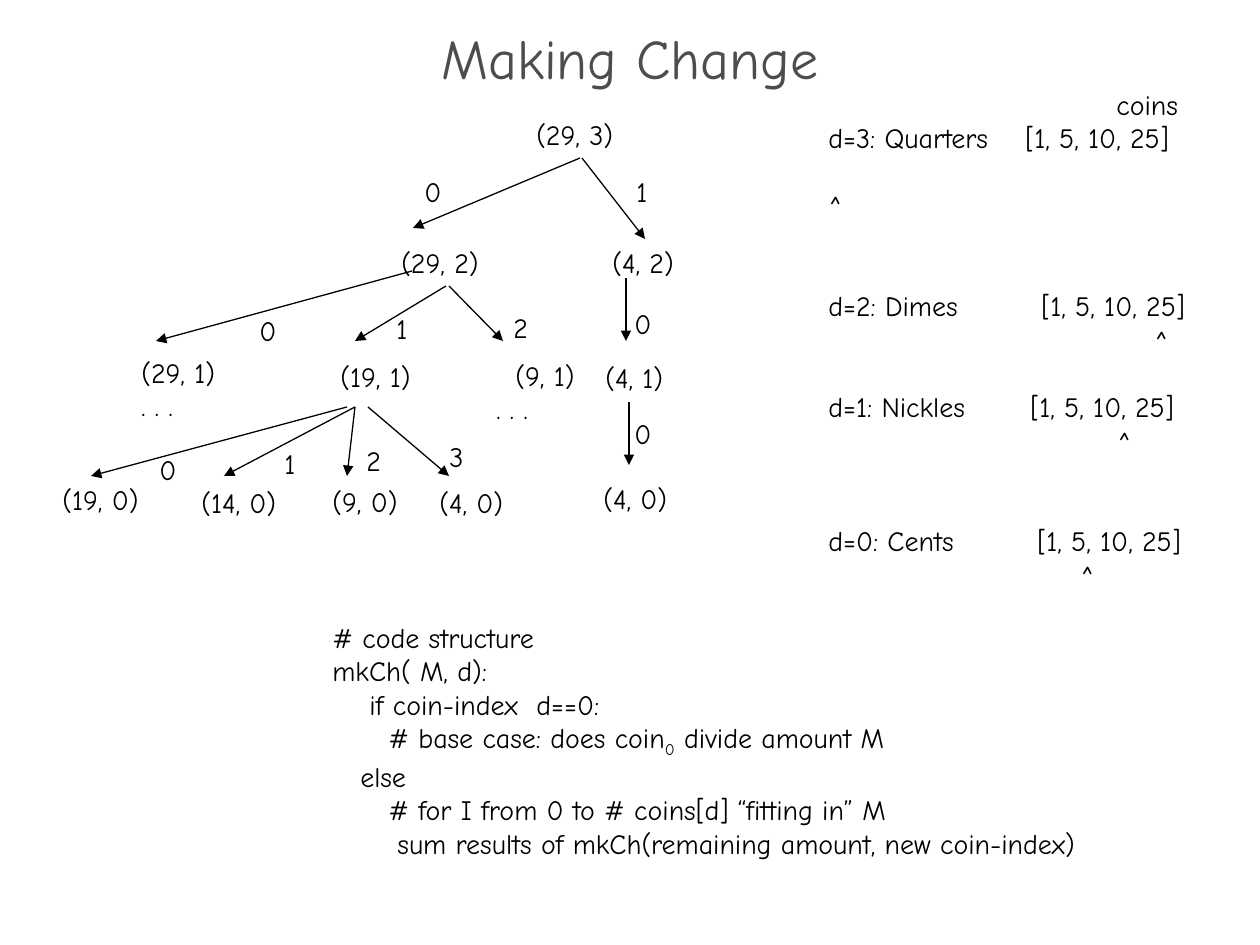
from dataclasses import dataclass
from lxml.etree import SubElement as Sub
from pptx import Presentation
from pptx.dml.color import RGBColor as Rgb
from pptx.enum.shapes import MSO_CONNECTOR as Link
from pptx.enum.text import MSO_ANCHOR as Anchor, MSO_AUTO_SIZE as Fit, PP_ALIGN as Align
from pptx.oxml.ns import qn
from pptx.util import Emu, Pt


@dataclass(frozen=True)
class Theme:
    face: str = "Comic Neue"
    ink: Rgb = Rgb(0, 0, 0)
    head: Rgb = Rgb(0x4D, 0x4D, 0x4D)
    title: int = 32
    body: int = 16
    row: float = 19.2  # height of one body line, in points
    line: float = 0.75


THEME = Theme()

# text, left, top, width, indent of the first line
NODES = [
    ("(29, 3)", 474, 0, 113, 0),
    ("(29, 2)", 339, 128, 113, 0),
    ("(4, 2)", 550, 128, 97, 0),
    ("(29, 1)\n. . .", 79, 238, 110, 0),
    ("(19, 1)", 278, 242, 105, 0),
    ("(9, 1)\n. . .", 434, 241, 110, 19),
    ("(4, 1)", 543, 243, 92, 0),
    ("(19, 0)", 0, 365, 110, 0),
    ("(14, 0)", 139, 368, 110, 0),
    ("(9, 0)", 270, 367, 97, 0),
    ("(4, 0)", 377, 368, 97, 0),
    ("(4, 0)", 541, 364, 97, 0),
]
# start, end, coin count, place of the count
EDGES = [
    ((530, 47), (363, 117), "0", (362, 57)),
    ((532, 47), (595, 128), "1", (574, 57)),
    ((362, 160), (106, 230), "0", (197, 196)),
    ((396, 175), (305, 230), "1", (334, 194)),
    ((399, 175), (453, 230), "2", (451, 193)),
    ((576, 167), (576, 230), "0", (572, 189)),
    ((297, 296), (41, 365), "0", (97, 335)),
    ((305, 296), (174, 365), "1", (222, 329)),
    ((305, 296), (297, 365), "2", (304, 326)),
    ((318, 296), (399, 365), "3", (387, 322)),
    ((579, 291), (579, 354), "0", (572, 299)),
]
# name, list offset, caret offset, lines skipped before the name and the caret
COINS = [
    ("d=3: Quarters", 197, 0, 0, 1),
    ("d=2: Dimes", 213, 326, 2, 0),
    ("d=1: Nickles", 202, 289, 1, 0),
    ("d=0: Cents", 209, 252, 2, 0),
]
# indent, pieces of text; every second piece is a subscript
CODE = [
    (0, ["# code structure"]),
    (0, ["mkCh( M, d):"]),
    (37, ["if coin-index  d==0:"]),
    (56, ["# base case: does coin", "0", " divide amount M"]),
    (28, ["else"]),
    (56, ["# for I from 0 to # coins[d] “fitting in” M"]),
    (65, ["sum results of mkCh(remaining amount, new coin-index)"]),
]


def px(n):
    return Emu(n * 914400 // 126)


def style(para, size=THEME.body, color=THEME.ink):
    font = para.font
    font.name, font.size, font.color.rgb = THEME.face, Pt(size), color


def frame(slide, box, wrap=True):
    text = slide.shapes.add_textbox(*map(px, box)).text_frame
    text.word_wrap = wrap
    return text


def add_line(text, first, words, indent=0, skip=0):
    """Add a paragraph, indented in px and set down by skipped lines."""
    para = text.paragraphs[0] if first else text.add_paragraph()
    para.text = words
    style(para)
    if skip:
        para.space_before = Pt(skip * THEME.row)
    if indent:
        para._p.get_or_add_pPr().set("marL", str(px(indent)))
    return para


def add_tab(para, left):
    tabs = para._p.get_or_add_pPr()
    stops = tabs.makeelement(qn("a:tabLst"), {})
    Sub(stops, qn("a:tab"), pos=str(px(left)), algn="l")
    tabs.find(qn("a:defRPr")).addprevious(stops)


def add_title(slide, box, words):
    shape = slide.shapes.title
    shape.left, shape.top, shape.width, shape.height = map(px, box)
    text = shape.text_frame
    text.auto_size, text.vertical_anchor = Fit.NONE, Anchor.MIDDLE
    text.text = words
    para = text.paragraphs[0]
    para.alignment, para.line_spacing = Align.CENTER, 0.7
    style(para, THEME.title, THEME.head)


def add_arrow(slide, start, end):
    arrow = slide.shapes.add_connector(Link.STRAIGHT, *map(px, start + end))
    arrow.line.color.rgb, arrow.line.width = THEME.ink, Pt(THEME.line)
    Sub(arrow.line._get_or_add_ln(), qn("a:tailEnd"), type="triangle")
    Sub(arrow._element.spPr, qn("a:effectLst"))


def add_tree(slide, left, top):
    def place(x, y):
        return left + x, top + y

    for start, end, count, spot in EDGES:
        add_arrow(slide, place(*start), place(*end))
        add_line(frame(slide, (*place(*spot), 43, 47), False), True, count)
    for words, x, y, wide, indent in NODES:
        rows = words.split("\n")
        text = frame(slide, (*place(x, y), wide, 13 + 34 * len(rows)), False)
        for i, row in enumerate(rows):
            add_line(text, i == 0, row, 0 if i else indent)


def add_coins(slide, box):
    text = frame(slide, box)
    add_line(text, True, "coins", 288)
    for name, tab, caret, gap, drop in COINS:
        para = add_line(text, False, name + "\t[1, 5, 10, 25]", skip=gap)
        add_tab(para, tab)
        add_line(text, False, "^", caret, drop)


def add_code(slide, box):
    text = frame(slide, box)
    for i, (indent, parts) in enumerate(CODE):
        para = add_line(text, i == 0, "", indent)
        for j, part in enumerate(parts):
            run = para.add_run()
            run.text = part
            if j % 2:
                run.font._element.set("baseline", "-25000")


def main():
    deck = Presentation()
    deck.slide_width, deck.slide_height = px(1260), px(945)
    slide = deck.slides.add_slide(deck.slide_layouts[5])
    add_title(slide, (0, 34, 1260, 63), "Making Change")
    add_tree(slide, 50, 111)
    add_coins(slide, (816, 81, 412, 488))
    add_code(slide, (320, 614, 810, 251))
    deck.save("out.pptx")


if __name__ == "__main__":
    main()
